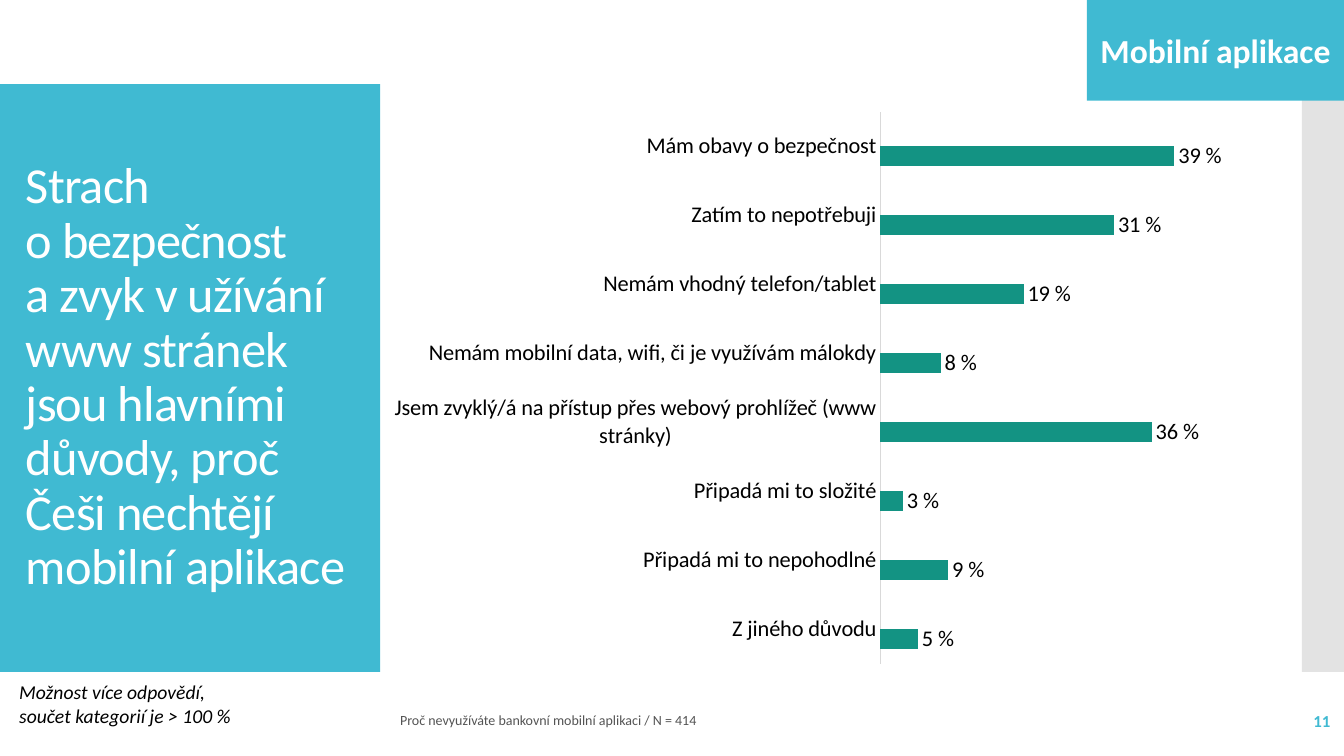
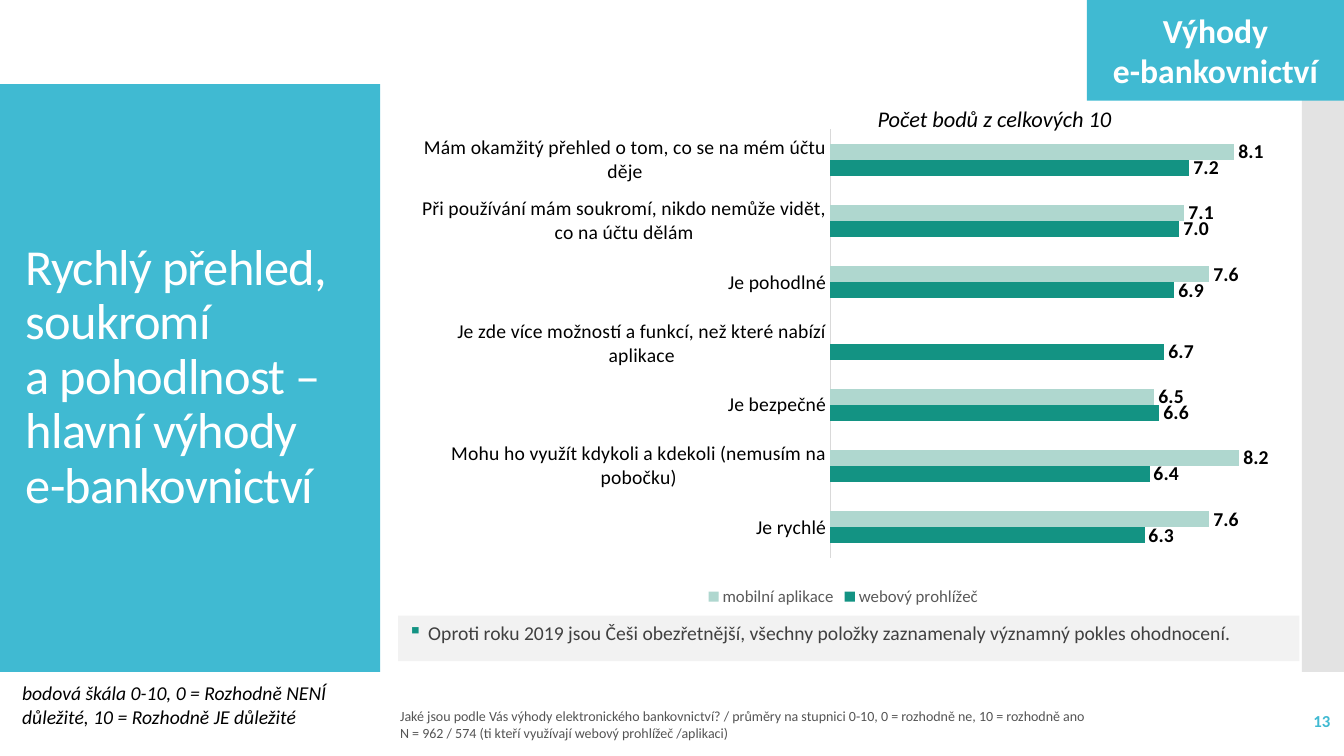
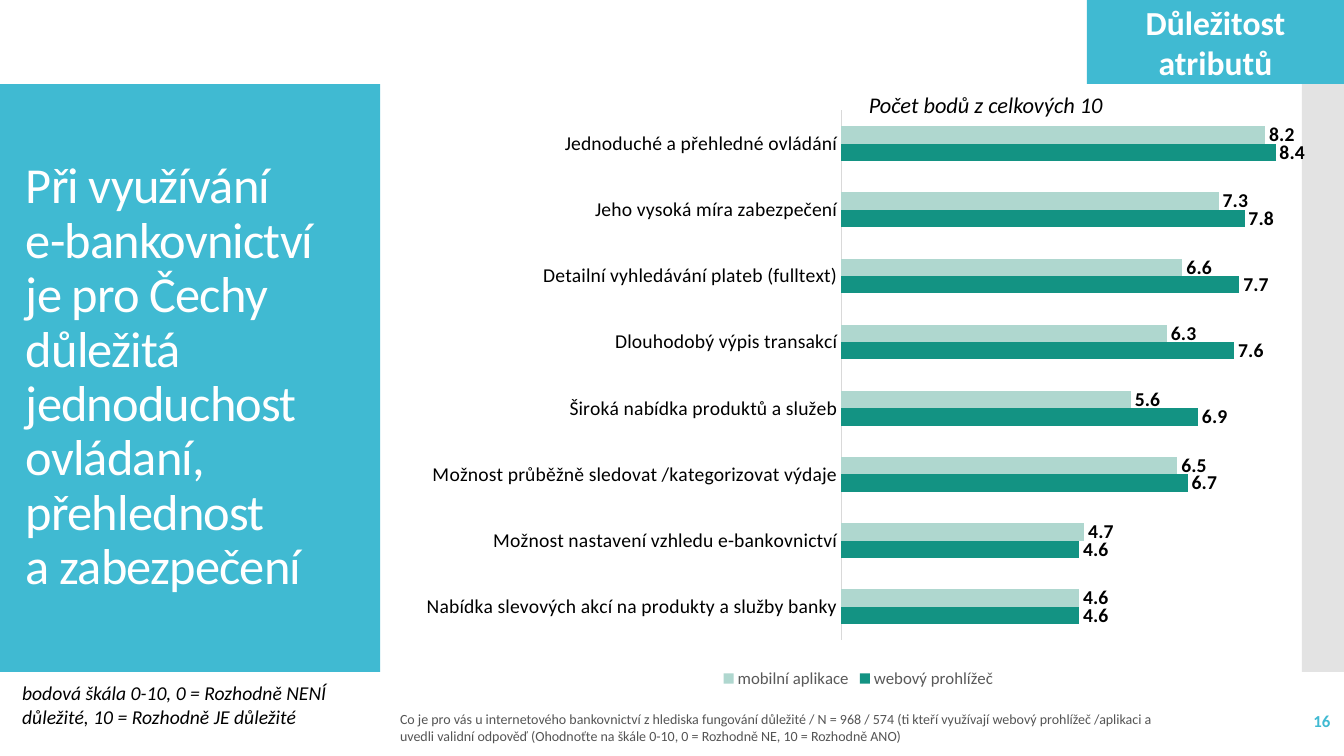
"""Build three survey slides on mobile and web banking."""
from dataclasses import dataclass
from typing import Optional

from lxml import etree
from pptx import Presentation
from pptx.chart.chart import Chart
from pptx.chart.data import CategoryChartData
from pptx.dml.color import RGBColor
from pptx.enum.chart import XL_CHART_TYPE, XL_LABEL_POSITION, XL_LEGEND_POSITION, XL_TICK_MARK
from pptx.enum.shapes import MSO_SHAPE
from pptx.enum.text import MSO_ANCHOR, PP_ALIGN
from pptx.oxml.ns import qn
from pptx.shapes.autoshape import Shape
from pptx.slide import Slide
from pptx.text.text import Font, TextFrame
from pptx.util import Emu, Inches, Pt

BAR_CLUSTERED = XL_CHART_TYPE.BAR_CLUSTERED
OUTSIDE_END = XL_LABEL_POSITION.OUTSIDE_END
LEGEND_BOTTOM = XL_LEGEND_POSITION.BOTTOM
NO_TICK = XL_TICK_MARK.NONE
RECTANGLE = MSO_SHAPE.RECTANGLE
TOP, MIDDLE = MSO_ANCHOR.TOP, MSO_ANCHOR.MIDDLE
LEFT, CENTER, RIGHT = PP_ALIGN.LEFT, PP_ALIGN.CENTER, PP_ALIGN.RIGHT

COLUMNS, ROWS = 32, 18
CELL = Inches(7.5) // ROWS
BLANK_LAYOUT = 6
FONT_NAME = "Calibri"
COLORS = {
    "accent": "40BAD2",
    "strip": "C8C8C8",
    "band": "F2F2F2",
    "white": "FFFFFF",
    "black": "000000",
    "body": "404040",
    "footnote": "545454",
    "legend": "595959",
    "axis": "D9D9D9",
    "web": "139383",
    "mobile": "AFD7CF",
}


@dataclass(frozen=True)
class Box:
    """A rectangle in grid columns and rows."""

    left: float
    top: float
    width: float
    height: float

    def lengths(self) -> tuple[Emu, Emu, Emu, Emu]:
        """Return left, top, width and height as slide lengths."""
        cells = (self.left, self.top, self.width, self.height)
        return tuple(Emu(round(cell * CELL)) for cell in cells)


@dataclass(frozen=True)
class TextStyle:
    """The look of the text in one box."""

    size: float
    color: str
    bold: bool = False
    italic: bool = False
    align: PP_ALIGN = LEFT
    anchor: MSO_ANCHOR = TOP
    line_spacing: Optional[float] = None
    tracking: Optional[int] = None


@dataclass(frozen=True)
class Series:
    """One row of bars."""

    name: str
    color: str
    values: tuple[Optional[float], ...]


@dataclass(frozen=True)
class BarChart:
    """A bar chart with its plot area in percent of the chart."""

    box: Box
    plot_area: tuple[float, float, float, float]
    categories: tuple[str, ...]
    series: tuple[Series, ...]
    maximum: float = 9
    number_format: str = "0.0"
    font_size: int = 14
    bold_labels: bool = True
    gap_width: int = 182
    reverse: bool = False
    legend: bool = True


@dataclass(frozen=True)
class SurveySlide:
    """The content of one slide."""

    number: int
    title: str
    banner: tuple[str, ...]
    banner_rows: float
    note: str
    note_box: Box
    footnote: str
    footnote_box: Box
    chart: BarChart
    caption_box: Optional[Box] = None
    finding: Optional[str] = None


PANEL_BOX = Box(0, 2, 9.05, 14)
STRIP_BOX = Box(COLUMNS - 1, 2, 1, 14)
TITLE_BOX = Box(0.38, 3, 8.3, 12)
NUMBER_BOX = Box(27.91, 16.68, 4, 0.96)
FINDING_BOX = Box(9.48, 14.66, 21.46, 1.08)
SCALE_NOTE_BOX = Box(0.29, 16.1, 9, 1.37)
BANNER_COLUMNS = 6.12

TITLE_STYLE = TextStyle(36, "white", anchor=MIDDLE, line_spacing=0.9, tracking=-60)
BANNER_STYLE = TextStyle(24, "white", bold=True, align=CENTER, anchor=MIDDLE)
NUMBER_STYLE = TextStyle(12, "accent", bold=True, align=RIGHT, anchor=MIDDLE)
FOOTNOTE_STYLE = TextStyle(10, "footnote")
NOTE_STYLE = TextStyle(14, "black", italic=True)
CAPTION_STYLE = TextStyle(16, "black", italic=True)
FINDING_STYLE = TextStyle(14, "body")

CAPTION = "Počet bodů z celkových 10"
SCALE_NOTE = "bodová škála 0-10, 0 = Rozhodně NENÍ důležité, 10 = Rozhodně JE důležité"
WEB, MOBILE = "webový prohlížeč", "mobilní aplikace"

SLIDES = (
    SurveySlide(
        number=11,
        title="Strach\no bezpečnost\na zvyk v užívání www stránek jsou hlavními "
        "důvody, proč Češi nechtějí mobilní aplikace",
        banner=("Mobilní aplikace",),
        banner_rows=2.4,
        note="Možnost více odpovědí, součet kategorií je > 100 %",
        note_box=Box(0.22, 16.08, 5.86, 1.37),
        footnote="Proč nevyužíváte bankovní mobilní aplikaci / N = 414",
        footnote_box=Box(9.29, 16.82, 19.66, 0.65),
        chart=BarChart(
            box=Box(9.02, 2.4, 20.45, 13.68),
            plot_area=(58.4, 1.9, 39.5, 96.1),
            categories=(
                "Mám obavy o bezpečnost",
                "Zatím to nepotřebuji",
                "Nemám vhodný telefon/tablet",
                "Nemám mobilní data, wifi, či je využívám málokdy",
                "Jsem zvyklý/á na přístup přes webový prohlížeč (www stránky)",
                "Připadá mi to složité",
                "Připadá mi to nepohodlné",
                "Z jiného důvodu",
            ),
            series=(
                Series("Series 1", "web", (None,) * 8),
                Series("Series 2", "web", (0.39, 0.31, 0.19, 0.08, 0.36, 0.03, 0.09, 0.05)),
            ),
            maximum=0.45,
            number_format="0 %",
            font_size=16,
            bold_labels=False,
            gap_width=150,
            reverse=True,
            legend=False,
        ),
    ),
    SurveySlide(
        number=13,
        title="Rychlý přehled, soukromí\na pohodlnost – hlavní výhody\ne-bankovnictví",
        banner=("Výhody", "e-bankovnictví"),
        banner_rows=2.4,
        note=SCALE_NOTE,
        note_box=SCALE_NOTE_BOX,
        footnote="Jaké jsou podle Vás výhody elektronického bankovnictví? / průměry na "
        "stupnici 0-10, 0 = rozhodně ne, 10 = rozhodně ano\n"
        "N = 962 / 574 (ti kteří využívají webový prohlížeč /aplikaci)",
        footnote_box=Box(9.29, 16.73, 21.46, 1.06),
        chart=BarChart(
            box=Box(9.7, 2.71, 20.76, 11.83),
            plot_area=(48.5, 3.1, 51.5, 86.3),
            categories=(
                "Je rychlé",
                "Mohu ho využít kdykoli a kdekoli (nemusím na pobočku)",
                "Je bezpečné",
                "Je zde více možností a funkcí, než které nabízí aplikace",
                "Je pohodlné",
                "Při používání mám soukromí, nikdo nemůže vidět, co na účtu dělám",
                "Mám okamžitý přehled o tom, co se na mém účtu děje",
            ),
            series=(
                Series(WEB, "web", (6.3, 6.4, 6.6, 6.7, 6.9, 7, 7.2)),
                Series(MOBILE, "mobile", (7.6, 8.2, 6.5, None, 7.6, 7.1, 8.1)),
            ),
        ),
        caption_box=Box(20.66, 2.38, 7.8, 0.89),
        finding="Oproti roku 2019 jsou Češi obezřetnější, všechny položky "
        "zaznamenaly významný pokles ohodnocení.",
    ),
    SurveySlide(
        number=16,
        title="Při využívání\ne-bankovnictví je pro Čechy důležitá jednoduchost "
        "ovládaní, přehlednost\na zabezpečení",
        banner=("Důležitost atributů",),
        banner_rows=2,
        note=SCALE_NOTE,
        note_box=SCALE_NOTE_BOX,
        footnote="Co je pro vás u internetového bankovnictví z hlediska fungování důležité "
        "/ N = 968 / 574 (ti kteří využívají webový prohlížeč /aplikaci a uvedli validní "
        "odpověď (Ohodnoťte na škále 0-10, 0 = Rozhodně NE, 10 = Rozhodně ANO)",
        footnote_box=Box(9.29, 16.8, 18.62, 1.06),
        chart=BarChart(
            box=Box(9.77, 2.26, 21.34, 14.23),
            plot_area=(48.1, 2.6, 51.9, 88.6),
            categories=(
                "Nabídka slevových akcí na produkty a služby banky",
                "Možnost nastavení vzhledu e-bankovnictví",
                "Možnost průběžně sledovat /kategorizovat výdaje",
                "Široká nabídka produktů a služeb",
                "Dlouhodobý výpis transakcí",
                "Detailní vyhledávání plateb (fulltext)",
                "Jeho vysoká míra zabezpečení",
                "Jednoduché a přehledné ovládání",
            ),
            series=(
                Series(WEB, "web", (4.6, 4.6, 6.7, 6.9, 7.6, 7.7, 7.8, 8.4)),
                Series(MOBILE, "mobile", (4.6, 4.7, 6.5, 5.6, 6.3, 6.6, 7.3, 8.2)),
            ),
        ),
        caption_box=Box(20.45, 2.06, 7.8, 0.89),
    ),
)


def rgb(name: str) -> RGBColor:
    """Look up a palette colour."""
    return RGBColor.from_string(COLORS[name])


def style_font(font: Font, size: float, color: str, bold: bool = False) -> None:
    """Set the shared typeface with a size, colour and weight."""
    font.name = FONT_NAME
    font.size = Pt(size)
    font.bold = bold
    font.color.rgb = rgb(color)


def write_text(frame: TextFrame, paragraphs: tuple[str, ...], style: TextStyle) -> None:
    """Write paragraphs, turning each newline into a line break."""
    frame.word_wrap = True
    frame.vertical_anchor = style.anchor
    for index, text in enumerate(paragraphs):
        paragraph = frame.add_paragraph() if index else frame.paragraphs[0]
        paragraph.alignment = style.align
        if style.line_spacing:
            paragraph.line_spacing = style.line_spacing
        for line_index, line in enumerate(text.split("\n")):
            if line_index:
                paragraph.add_line_break()
            run = paragraph.add_run()
            run.text = line
            style_font(run.font, style.size, style.color, style.bold)
            run.font.italic = style.italic
            if style.tracking:
                run.font._element.set("spc", str(style.tracking))


def add_text(slide: Slide, box: Box, text: str, style: TextStyle) -> None:
    """Add a text box with one paragraph."""
    write_text(slide.shapes.add_textbox(*box.lengths()).text_frame, (text,), style)


def add_rectangle(slide: Slide, box: Box, color: str) -> Shape:
    """Add a flat filled rectangle."""
    shape = slide.shapes.add_shape(RECTANGLE, *box.lengths())
    shape.shadow.inherit = False
    shape.fill.solid()
    shape.fill.fore_color.rgb = rgb(color)
    shape.line.fill.background()
    return shape


def add_frame(slide: Slide) -> None:
    """Draw the title panel and the translucent side strip."""
    add_rectangle(slide, PANEL_BOX, "accent")
    strip = add_rectangle(slide, STRIP_BOX, "strip")
    color = strip._element.spPr.find(qn("a:solidFill")).find(qn("a:srgbClr"))
    etree.SubElement(color, qn("a:alpha")).set("val", "50000")


def add_finding(slide: Slide, text: str) -> None:
    """Draw the grey band with its bulleted finding."""
    band = add_rectangle(slide, FINDING_BOX, "band")
    properties = band.text_frame.paragraphs[0]._p.get_or_add_pPr()
    properties.set("marL", str(Inches(0.2)))
    properties.set("indent", str(-Inches(0.2)))
    bullet_color = etree.SubElement(properties, qn("a:buClr"))
    etree.SubElement(bullet_color, qn("a:srgbClr")).set("val", COLORS["web"])
    etree.SubElement(properties, qn("a:buChar")).set("char", "▪")
    write_text(band.text_frame, (text,), FINDING_STYLE)


def place_plot(chart: Chart, percents: tuple[float, float, float, float]) -> None:
    """Fix the inner plot area inside the chart."""
    plot_area = chart._chartSpace.find(qn("c:chart")).find(qn("c:plotArea"))
    for automatic in plot_area.findall(qn("c:layout")):
        plot_area.remove(automatic)
    layout = etree.Element(qn("c:layout"))
    manual = etree.SubElement(layout, qn("c:manualLayout"))
    settings = [("layoutTarget", "inner"), ("xMode", "edge"), ("yMode", "edge")]
    settings += [(key, f"{share / 100:.3f}") for key, share in zip("xywh", percents)]
    for key, value in settings:
        etree.SubElement(manual, qn(f"c:{key}")).set("val", value)
    plot_area.insert(0, layout)


def add_bar_chart(slide: Slide, bar_chart: BarChart) -> None:
    """Add a clustered bar chart with labelled bars and a hidden value axis."""
    data = CategoryChartData()
    data.categories = bar_chart.categories
    for series in bar_chart.series:
        data.add_series(series.name, series.values)
    chart = slide.shapes.add_chart(BAR_CLUSTERED, *bar_chart.box.lengths(), data).chart
    style_font(chart.font, bar_chart.font_size, "black")
    chart.has_title = False
    chart.has_legend = bar_chart.legend
    if bar_chart.legend:
        chart.legend.position = LEGEND_BOTTOM
        chart.legend.include_in_layout = False
        style_font(chart.legend.font, 12, "legend")

    category_axis, value_axis = chart.category_axis, chart.value_axis
    category_axis.major_tick_mark = category_axis.minor_tick_mark = NO_TICK
    category_axis.reverse_order = bar_chart.reverse
    category_axis.format.line.color.rgb = rgb("axis")
    category_axis.format.line.width = Pt(0.75)
    style_font(category_axis.tick_labels.font, bar_chart.font_size, "black")
    value_axis.minimum_scale, value_axis.maximum_scale = 0, bar_chart.maximum
    value_axis.has_major_gridlines = False
    value_axis.visible = False

    plot = chart.plots[0]
    plot.gap_width, plot.overlap, plot.vary_by_categories = bar_chart.gap_width, 0, False
    for bars, series in zip(plot.series, bar_chart.series):
        bars.format.fill.solid()
        bars.format.fill.fore_color.rgb = rgb(series.color)
        labels = bars.data_labels
        labels.show_value = True
        labels.position = OUTSIDE_END
        labels.number_format = bar_chart.number_format
        labels.number_format_is_linked = False
        style_font(labels.font, bar_chart.font_size, "black", bar_chart.bold_labels)
    place_plot(chart, bar_chart.plot_area)


def add_survey_slide(presentation: Presentation, content: SurveySlide) -> None:
    """Add one complete slide."""
    slide = presentation.slides.add_slide(presentation.slide_layouts[BLANK_LAYOUT])
    add_frame(slide)
    add_text(slide, TITLE_BOX, content.title, TITLE_STYLE)
    add_text(slide, NUMBER_BOX, str(content.number), NUMBER_STYLE)
    add_text(slide, content.footnote_box, content.footnote, FOOTNOTE_STYLE)
    add_text(slide, content.note_box, content.note, NOTE_STYLE)
    if content.finding:
        add_finding(slide, content.finding)
    add_bar_chart(slide, content.chart)
    banner_box = Box(COLUMNS - BANNER_COLUMNS, 0, BANNER_COLUMNS, content.banner_rows)
    banner = add_rectangle(slide, banner_box, "accent")
    write_text(banner.text_frame, content.banner, BANNER_STYLE)
    if content.caption_box:
        add_text(slide, content.caption_box, CAPTION, CAPTION_STYLE)


def main() -> None:
    """Build and save the presentation."""
    presentation = Presentation()
    presentation.slide_width = Emu(COLUMNS * CELL)
    presentation.slide_height = Emu(ROWS * CELL)
    for content in SLIDES:
        add_survey_slide(presentation, content)
    presentation.save("out.pptx")


if __name__ == "__main__":
    main()
